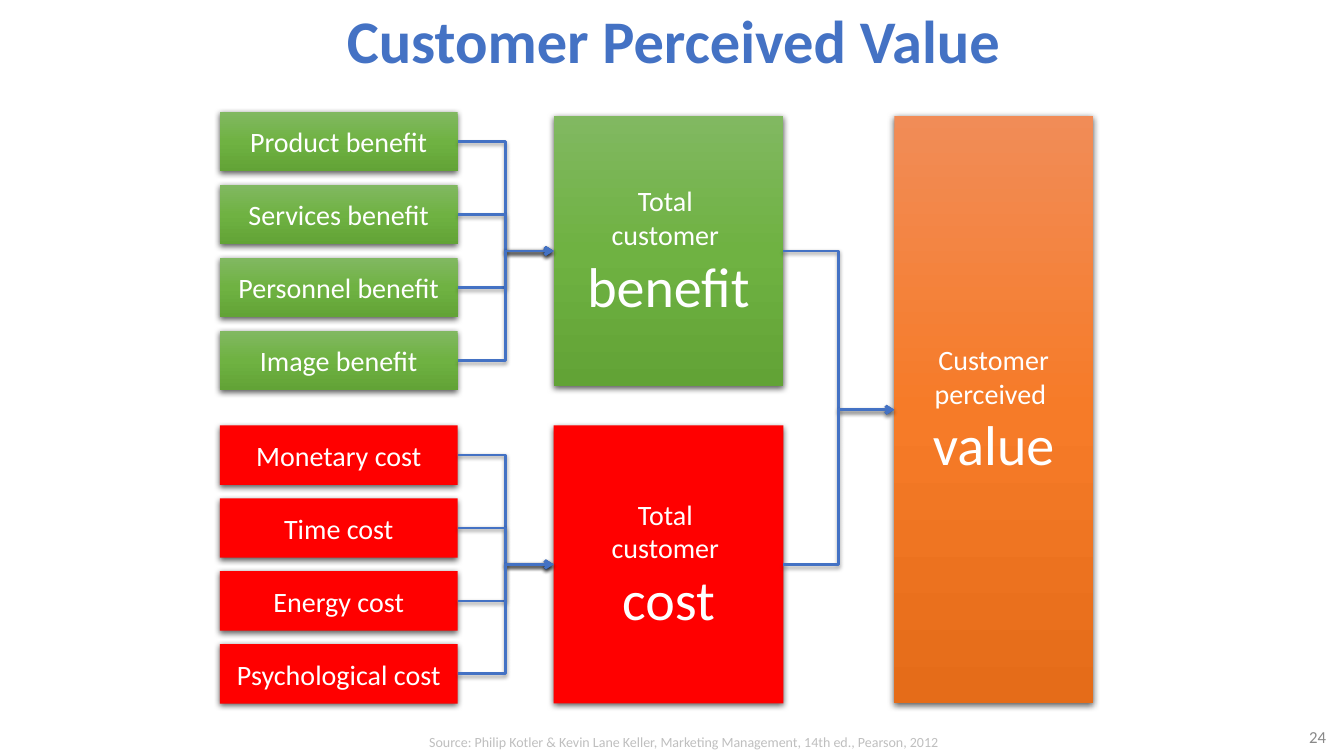
from pptx import Presentation
from pptx.dml.color import RGBColor
from pptx.enum.shapes import MSO_CONNECTOR as Connector, MSO_SHAPE as Shape
from pptx.enum.text import MSO_ANCHOR as Anchor, PP_ALIGN as Align
from pptx.oxml import parse_xml
from pptx.oxml.ns import nsdecls, qn
from pptx.util import Inches, Pt

BLUE, WHITE, RED = "4472C4", "FFFFFF", "FF0000"
GREENS = ("81B861", "6FB242", "62A336")
ORANGES = ("F18C57", "F67B28", "E56C19")
BOX_SHADOW = {"alpha": 63, "blur": 4.5, "distance": 1.5}
LINE_SHADOW = {"alpha": 38, "blur": 3.1, "distance": 1.6}
ROW_HEIGHT = 0.59
RIGHT_SIDE, LEFT_SIDE = 3, 1

BENEFITS = ("Product benefit", "Services benefit", "Personnel benefit", "Image benefit")
COSTS = ("Monetary cost", "Time cost", "Energy cost", "Psychological cost")


def color(hex_value):
    return RGBColor.from_string(hex_value)


def format_span(span, size, hex_value, bold=False):
    values = {"name": "Calibri", "size": Pt(size), "bold": bold}
    for name, value in values.items():
        setattr(span.font, name, value)
    span.font.color.rgb = color(hex_value)


def write(frame, lines, align=Align.CENTER, anchor=Anchor.MIDDLE, bold=False):
    """Fill one paragraph with (text, size, colour) lines."""
    frame.word_wrap = True
    frame.vertical_anchor = anchor
    para = frame.paragraphs[0]
    para.alignment = align
    for index, (text, size, hex_value) in enumerate(lines):
        if index:
            para.add_line_break()
        format_span(para.add_run(), size, hex_value, bold)
        para.runs[-1].text = text


def shadow_xml(alpha, blur, distance):
    return parse_xml(
        f'<a:outerShdw {nsdecls("a")} blurRad="{Pt(blur)}" dist="{Pt(distance)}" '
        f'dir="5400000" algn="ctr" rotWithShape="0"><a:srgbClr val="000000">'
        f'<a:alpha val="{alpha * 1000}"/></a:srgbClr></a:outerShdw>')


def fill_box(shape, fill):
    """Fill with one colour, or with a top-to-bottom gradient of three."""
    if isinstance(fill, str):
        shape.fill.solid()
        shape.fill.fore_color.rgb = color(fill)
        return
    shape.fill.gradient()
    shape.fill.gradient_angle = 270
    stops = shape._element.spPr.find(f'{qn("a:gradFill")}/{qn("a:gsLst")}')
    for stop in list(stops):
        stops.remove(stop)
    for index, hex_value in enumerate(fill):
        stops.append(parse_xml(
            f'<a:gs {nsdecls("a")} pos="{index * 50000}"><a:srgbClr val="{hex_value}"/></a:gs>'))


def add_box(page, box, fill, lines):
    shape = page.shapes.add_shape(Shape.RECTANGLE, *map(Inches, box))
    fill_box(shape, fill)
    shape.line.fill.background()
    shape.shadow.inherit = False
    shape._element.spPr.find(qn("a:effectLst")).append(shadow_xml(**BOX_SHADOW))
    write(shape.text_frame, [(text, size, WHITE) for text, size in lines])
    return shape


def add_arrow(page, source, target):
    arrow = page.shapes.add_connector(Connector.ELBOW, 0, 0, 0, 0)
    arrow.begin_connect(source, RIGHT_SIDE)
    arrow.end_connect(target, LEFT_SIDE)
    arrow.line.color.rgb = color(BLUE)
    arrow.line.width = Pt(2)
    properties = arrow._element.spPr
    properties.find(qn("a:ln")).append(parse_xml(f'<a:tailEnd {nsdecls("a")} type="arrow"/>'))
    effects = parse_xml(f'<a:effectLst {nsdecls("a")}/>')
    effects.append(shadow_xml(**LINE_SHADOW))
    properties.append(effects)


def add_stack(page, box, fill, labels):
    """Spread equal rows over the height of the box."""
    left, top, width, height = box
    step = (height - ROW_HEIGHT) / (len(labels) - 1)
    return [add_box(page, (left, top + index * step, width, ROW_HEIGHT), fill, [(label, 20)])
            for index, label in enumerate(labels)]


def add_group(page, stack_box, total_box, fill, labels, word):
    """A stack of parts with arrows into their total."""
    rows = add_stack(page, stack_box, fill, labels)
    total = add_box(page, total_box, fill, [("Total ", 20), ("customer ", 20), (word, 40)])
    for row in rows:
        add_arrow(page, row, total)
    return total


def add_title(page, box, text):
    title = page.shapes.title
    for name, value in zip(("left", "top", "width", "height"), box):
        setattr(title, name, Inches(value))
    write(title.text_frame, [(text, 43.2, BLUE)], bold=True)


def add_note(page, box, line, align, anchor):
    note = page.shapes.add_textbox(*map(Inches, box))
    write(note.text_frame, [line], align, anchor)


def main():
    deck = Presentation()
    deck.slide_width, deck.slide_height = Inches(13.33), Inches(7.5)
    page = deck.slides.add_slide(deck.slide_layouts[5])

    # Title
    add_title(page, (2.18, 0.02, 9, 0.74), "Customer Perceived Value")

    # Benefits and costs
    totals = [
        add_group(page, (2.18, 1.11, 2.36, 2.76), (5.49, 1.15, 2.28, 2.68),
                  GREENS, BENEFITS, "benefit"),
        add_group(page, (2.18, 4.22, 2.36, 2.76), (5.49, 4.22, 2.28, 2.76),
                  RED, COSTS, "cost"),
    ]

    # Resulting value
    result = add_box(page, (8.87, 1.15, 1.97, 5.83), ORANGES,
                     [("Customer perceived ", 20), ("value", 40)])
    for total in totals:
        add_arrow(page, total, result)

    # Source and page number
    source = "Source: Philip Kotler & Kevin Lane Keller, Marketing Management, 14th ed., Pearson, 2012"
    add_note(page, (3.52, 7.23, 6.52, 0.27), (source, 10, "BFBFBF"), Align.CENTER, Anchor.TOP)
    add_note(page, (12.2, 7.18, 1.05, 0.26), ("24", 12, "898989"), Align.RIGHT, Anchor.MIDDLE)

    deck.save("out.pptx")


if __name__ == "__main__":
    main()
